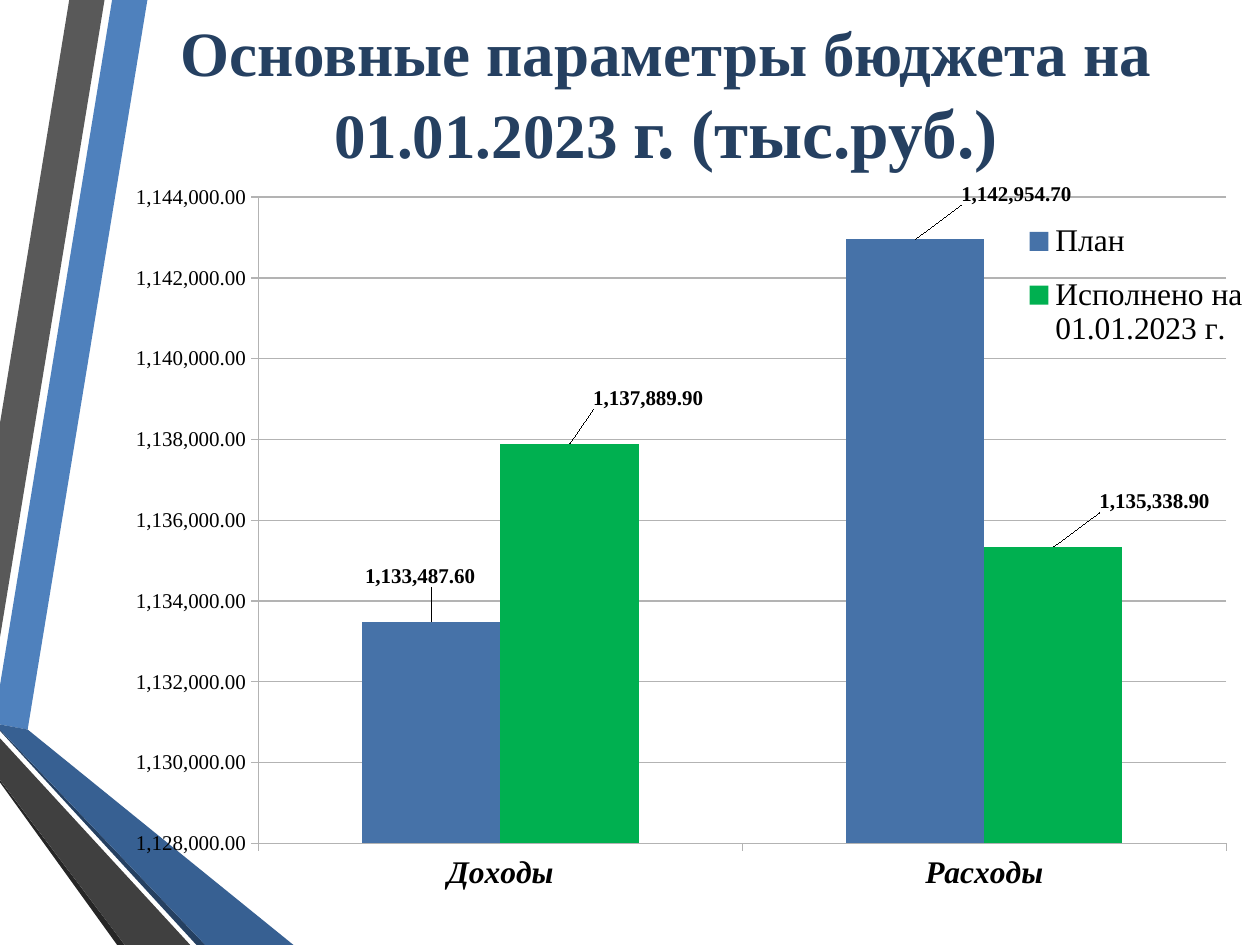
import dataclasses

import lxml.etree
import pptx
import pptx.chart.data
import pptx.dml.color
import pptx.enum.chart
import pptx.enum.text
import pptx.oxml.ns
import pptx.util

Inches = pptx.util.Inches
qn = pptx.oxml.ns.qn


@dataclasses.dataclass(frozen=True)
class Theme:
    """Hold the colours, font and type sizes."""
    face: str = "Times New Roman"
    ink: str = "254061"
    black: str = "000000"
    grid: str = "B3B3B3"
    plan: str = "4672A8"
    done: str = "00B050"
    head: float = 36
    tail: float = 39.6
    gap: float = 44
    body: float = 18
    small: float = 12


THEME = Theme()

BANDS = [
    ("4F81BD", [(0, 5.44), (0, 5.75), (0.22, 5.79), (1.17, 0), (0.89, 0)]),
    ("595959", [(0.83, 0), (0.55, 0), (0, 3.36), (0, 5.06)]),
    ("262626", [(0, 6.19), (0, 6.21), (0.93, 7.5), (0.99, 7.5)]),
    ("254061", [(0, 5.79), (0, 5.8), (1.56, 7.5), (1.63, 7.5)]),
    ("376092", [(0, 5.79), (1.63, 7.5), (2.33, 7.5), (0.22, 5.79), (0, 5.75)]),
    ("404040", [(0, 6.19), (0.99, 7.5), (1.51, 7.5), (0, 5.86)]),
]

GROUPS = ["Доходы", "Расходы"]
SERIES = [
    ("План", THEME.plan, [1133487.6, 1142954.7],
     [(-0.01, -0.04), (0.09, -0.04)]),
    ("Исполнено на 01.01.2023 г.", THEME.done, [1137889.9, 1135338.9],
     [(0.07, -0.04), (0.09, -0.04)]),
]


def apply(item, **form):
    """Set each format value on the item."""
    for name, value in form.items():
        setattr(item, name, value)


def style(font, size, tone=THEME.black, **form):
    """Style a font from the theme."""
    apply(font, name=THEME.face, size=pptx.util.Pt(size), **form)
    font.color.rgb = pptx.dml.color.RGBColor.from_string(tone)


def paint(fill, tone):
    """Fill with a solid colour."""
    fill.solid()
    fill.fore_color.rgb = pptx.dml.color.RGBColor.from_string(tone)


def place(owner, index, **marks):
    """Give a chart part a manual layout."""
    for old in owner.findall(qn("c:layout")):
        owner.remove(old)
    box = lxml.etree.Element(qn("c:layout"))
    owner.insert(index, box)
    inner = lxml.etree.SubElement(box, qn("c:manualLayout"))
    for name, value in marks.items():
        lxml.etree.SubElement(inner, qn("c:" + name)).set("val", str(value))


def add_band(slide, tone, points):
    """Draw one filled band."""
    spots = [(Inches(x), Inches(y)) for x, y in points]
    pen = slide.shapes.build_freeform(*spots[0])
    pen.add_line_segments(spots[1:], close=True)
    band = pen.convert_to_shape()
    band.shadow.inherit = False
    paint(band.fill, tone)
    band.line.fill.background()


def add_title(slide):
    """Write the two-line title."""
    box = slide.shapes.add_textbox(Inches(1.07), 0, Inches(8.43), Inches(1.47))
    apply(box.text_frame, word_wrap=True,
          vertical_anchor=pptx.enum.text.MSO_ANCHOR.MIDDLE)
    para = box.text_frame.paragraphs[0]
    para.alignment = pptx.enum.text.PP_ALIGN.CENTER
    for text, size in [("Основные параметры бюджета на", THEME.head),
                       (None, THEME.gap),
                       ("01.01.2023 ", THEME.head),
                       ("г. (тыс.руб.)", THEME.tail)]:
        if text:
            run = para.add_run()
            run.text = text
            style(run.font, size, THEME.ink, bold=True)
        else:
            para.add_line_break()
            mark = lxml.etree.SubElement(para._p[-1], qn("a:rPr"))
            mark.set("sz", str(size * 100))


def style_axes(chart):
    """Format both axes and the grid."""
    cross = pptx.enum.chart.XL_TICK_MARK
    axis = chart.value_axis
    apply(axis, minimum_scale=1128000, maximum_scale=1144000, major_unit=2000,
          has_major_gridlines=True, major_tick_mark=cross.OUTSIDE)
    apply(axis.tick_labels, number_format="#,##0.00",
          number_format_is_linked=False)
    style(axis.tick_labels.font, THEME.small)
    style(chart.category_axis.tick_labels.font, THEME.body,
          bold=True, italic=True)
    chart.category_axis.major_tick_mark = cross.OUTSIDE
    for line in (axis.format.line, axis.major_gridlines.format.line,
                 chart.category_axis.format.line):
        paint(line.fill, THEME.grid)
        line.width = pptx.util.Pt(0.75)


def style_bars(chart):
    """Colour the bars and shift their labels."""
    plot = chart.plots[0]
    apply(plot, gap_width=150, overlap=0, vary_by_categories=False)
    for bars, (_, tone, _, shifts) in zip(plot.series, SERIES):
        paint(bars.format.fill, tone)
        bars.invert_if_negative = False
        tags = bars.data_labels
        apply(tags, show_value=True, number_format="#,##0.00",
              number_format_is_linked=False)
        style(tags.font, THEME.small, bold=True)
        for index, (x, y) in enumerate(shifts):
            tag = bars.points[index].data_label
            style(tag.font, THEME.small, bold=True)
            tag.position = pptx.enum.chart.XL_LABEL_POSITION.OUTSIDE_END
            place(tags._element.findall(qn("c:dLbl"))[index], 1, x=x, y=y)


def add_chart(slide):
    """Add the clustered column chart."""
    data = pptx.chart.data.CategoryChartData(number_format="#,##0.00")
    data.categories = GROUPS
    for name, _, values, _ in SERIES:
        data.add_series(name, values)
    chart = slide.shapes.add_chart(
        pptx.enum.chart.XL_CHART_TYPE.COLUMN_CLUSTERED, Inches(1.07),
        Inches(1.39), Inches(8.93), Inches(5.83), data).chart
    apply(chart, has_title=False, has_legend=True)
    style(chart.font, THEME.body)
    style_axes(chart)
    style_bars(chart)
    apply(chart.legend, include_in_layout=False,
          position=pptx.enum.chart.XL_LEGEND_POSITION.RIGHT)
    style(chart.legend.font, THEME.body)
    place(chart.legend._element, 1, xMode="edge", yMode="edge",
          x=0.78, y=0.04, w=0.22, h=0.22)
    area = chart._chartSpace.find(".//" + qn("c:plotArea"))
    place(area, 0, layoutTarget="inner", xMode="edge", yMode="edge",
          x=0.11, y=0.03, w=0.86, h=0.88)


def main():
    """Build and save the slide."""
    deck = pptx.Presentation()
    apply(deck, slide_width=Inches(10), slide_height=Inches(7.5))
    slide = deck.slides.add_slide(deck.slide_layouts[6])
    for tone, points in BANDS:
        add_band(slide, tone, points)
    add_title(slide)
    add_chart(slide)
    deck.save("out.pptx")


if __name__ == "__main__":
    main()
